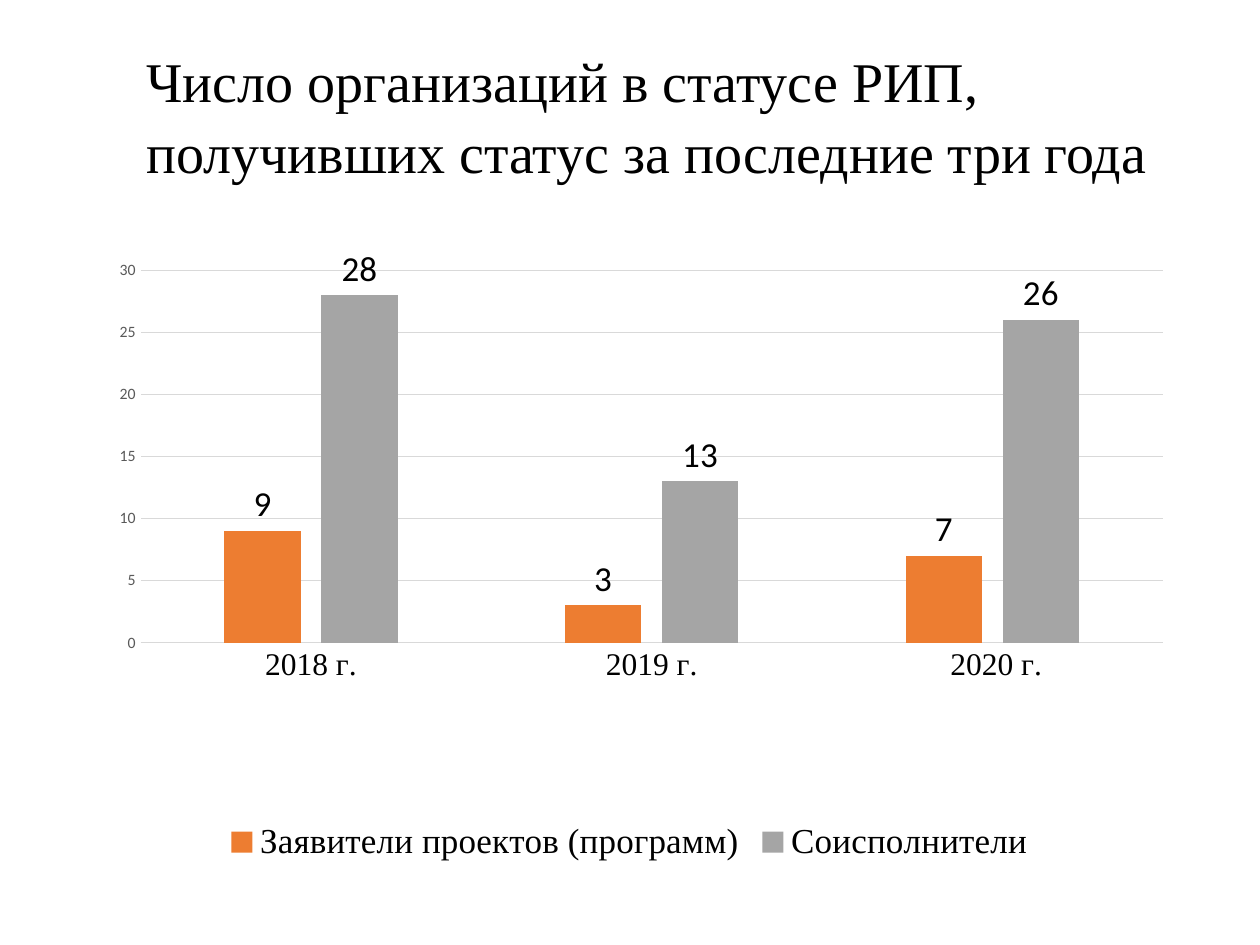
from lxml import etree
from pptx import Presentation
from pptx.chart.data import CategoryChartData
from pptx.dml.color import RGBColor
from pptx.enum.chart import XL_CHART_TYPE, XL_LABEL_POSITION, XL_LEGEND_POSITION, XL_TICK_MARK
from pptx.enum.text import MSO_ANCHOR, PP_ALIGN
from pptx.util import Emu, Pt

COLUMNS = XL_CHART_TYPE.COLUMN_CLUSTERED
LABEL_ABOVE = XL_LABEL_POSITION.OUTSIDE_END
LEGEND_BOTTOM = XL_LEGEND_POSITION.BOTTOM
NO_TICK = XL_TICK_MARK.NONE
TOP, LEFT = MSO_ANCHOR.TOP, PP_ALIGN.LEFT

EMU_PER_PX = 914400 // 126
SERIF, SANS = "Times New Roman", "Calibri"
BLACK, GRID = "000000", "D9D9D9"


def color(hex_value):
    return RGBColor.from_string(hex_value)


def set_font(font, name, size, hex_value):
    for attribute, value in {"name": name, "size": Pt(size), "bold": False}.items():
        setattr(font, attribute, value)
    font.color.rgb = color(hex_value)


presentation = Presentation()
presentation.slide_width = Emu(1260 * EMU_PER_PX)
presentation.slide_height = Emu(945 * EMU_PER_PX)
slide = presentation.slides.add_slide(presentation.slide_layouts[5])

# Title
title = slide.shapes.title
title.left, title.top, title.width, title.height = [
    Emu(length * EMU_PER_PX) for length in (134, 37, 1071, 149)]
frame = title.text_frame
for attribute, value in {"word_wrap": True, "vertical_anchor": TOP}.items():
    setattr(frame, attribute, value)
paragraph = frame.paragraphs[0]
paragraph.text = "Число организаций в статусе РИП, получивших статус за последние три года"
paragraph.alignment = LEFT
paragraph.line_spacing = 1.05
set_font(paragraph.runs[0].font, SERIF, 32, BLACK)

# Chart data
series_rows = [
    ("Заявители проектов (программ)", (9, 3, 7), "ED7D31"),
    ("Соисполнители", (28, 13, 26), "A5A5A5"),
]
chart_data = CategoryChartData()
chart_data.categories = ["2018 г.", "2019 г.", " 2020 г."]
for name, values, _ in series_rows:
    chart_data.add_series(name, values)

# Chart
chart_box = [Emu(length * EMU_PER_PX) for length in (74, 204, 1111, 665)]
chart = slide.shapes.add_chart(COLUMNS, *chart_box, chart_data).chart
chart.has_title = False
set_font(chart.font, SANS, 10, BLACK)

# Columns and their labels
plot = chart.plots[0]
for attribute, value in {"gap_width": 219, "overlap": -27, "vary_by_categories": False}.items():
    setattr(plot, attribute, value)
for series, (_, _, fill) in zip(plot.series, series_rows):
    series.format.fill.solid()
    series.format.fill.fore_color.rgb = color(fill)
    labels = series.data_labels
    labels.show_value = True
    labels.position = LABEL_ABOVE
    set_font(labels.font, SANS, 20, BLACK)

# Axes and gridlines
category_axis, value_axis = chart.category_axis, chart.value_axis
for axis in (category_axis, value_axis):
    axis.major_tick_mark = axis.minor_tick_mark = NO_TICK
set_font(category_axis.tick_labels.font, SERIF, 18, BLACK)
set_font(value_axis.tick_labels.font, SANS, 9, "595959")
for attribute, value in {"minimum_scale": 0, "maximum_scale": 30, "major_unit": 5}.items():
    setattr(value_axis, attribute, value)
value_axis.format.line.fill.background()
for line in (category_axis.format.line, value_axis.major_gridlines.format.line):
    line.color.rgb = color(GRID)
    line.width = Pt(0.75)

# Legend
chart.has_legend = True
chart.legend.position = LEGEND_BOTTOM
chart.legend.include_in_layout = False
set_font(chart.legend.font, SERIF, 20, BLACK)

# Fixed inner plot area, as fractions of the chart
plot_area = plot._element.getparent()
namespace = "{%s}" % plot_area.nsmap["c"]
for old_layout in plot_area.findall(namespace + "layout"):
    plot_area.remove(old_layout)
layout = etree.Element(namespace + "layout")
manual = etree.SubElement(layout, namespace + "manualLayout")
for tag, value in {"layoutTarget": "inner", "xMode": "edge", "yMode": "edge",
                   "x": 0.06, "y": 0.1, "w": 0.92, "h": 0.56}.items():
    etree.SubElement(manual, namespace + tag, val=str(value))
plot_area.insert(0, layout)

presentation.save("out.pptx")
